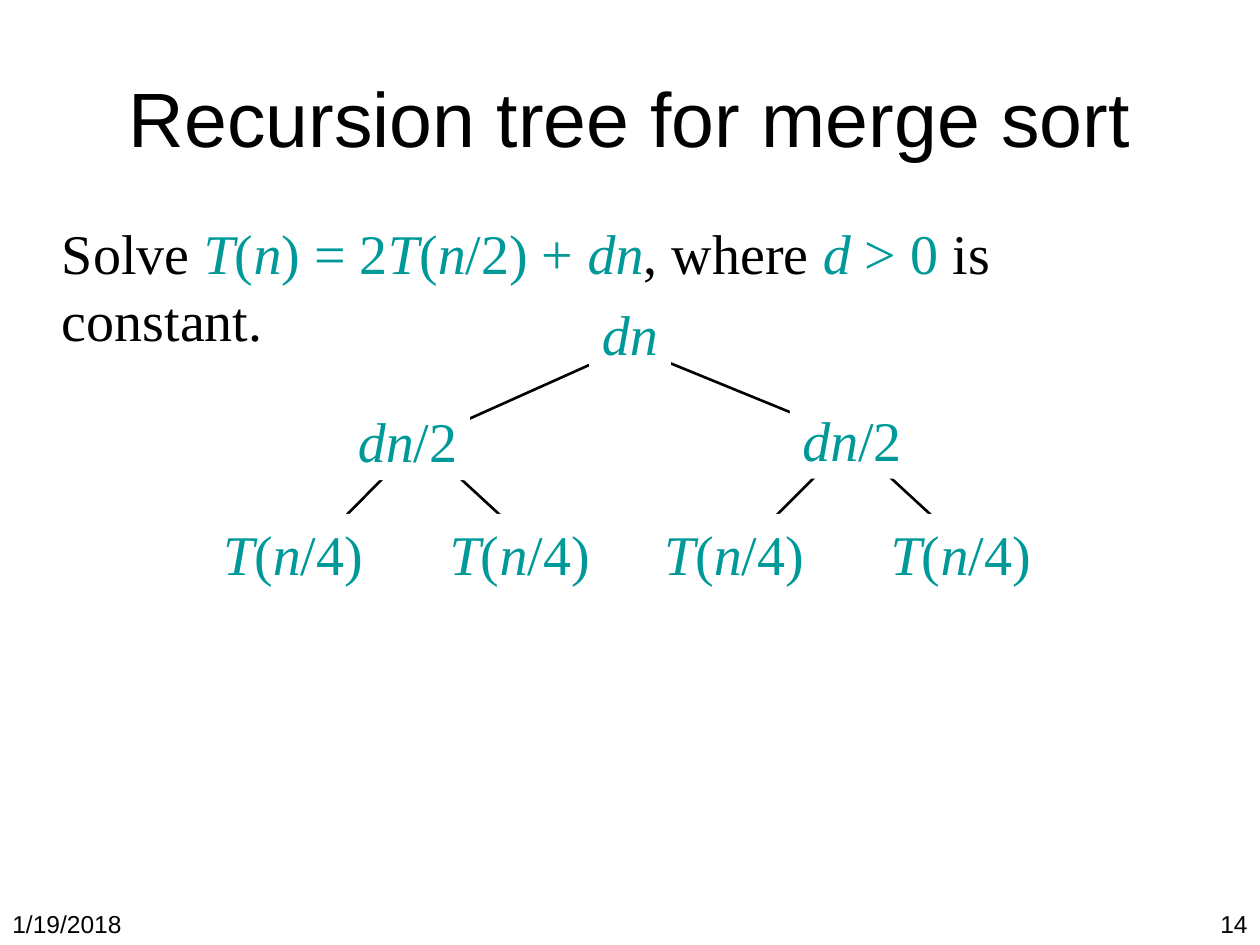
from dataclasses import dataclass

from lxml.etree import SubElement
from pptx import Presentation
from pptx.dml.color import RGBColor
from pptx.enum.shapes import MSO_CONNECTOR, MSO_SHAPE
from pptx.enum.text import MSO_ANCHOR, PP_ALIGN
from pptx.oxml.ns import qn
from pptx.util import Cm, Pt

COLORS = {"text": "000000", "math": "009999", "back": "FFFFFF"}
SANS, SERIF = "Arial", "Times New Roman"
NODE_H = 1.6


@dataclass
class Node:
    text: str
    x: float  # centre, cm
    y: float  # top, cm
    w: float


@dataclass
class Edge:
    x1: float
    y1: float
    x2: float
    y2: float


def rgb(name: str) -> RGBColor:
    return RGBColor.from_string(COLORS[name])


def add_text(p, text: str, *, font=SERIF, size=32, color="text") -> None:
    """Add runs to a paragraph; parts between asterisks are italic."""
    for i, part in enumerate(text.split("*")):
        if part:
            r = p.add_run()
            r.text = part
            r.font.name, r.font.size = font, Pt(size)
            r.font.italic = i % 2 == 1
            r.font.color.rgb = rgb(color)


def add_box(s, x: float, y: float, w: float, h: float, *, align=PP_ALIGN.LEFT, leading=None):
    """Add a text box and return its paragraph."""
    tf = s.shapes.add_textbox(Cm(x), Cm(y), Cm(w), Cm(h)).text_frame
    tf.word_wrap = True
    p = tf.paragraphs[0]
    p.alignment = align
    if leading:
        p.line_spacing = Pt(leading)
    return p


def draw_edge(s, e: Edge) -> None:
    c = s.shapes.add_connector(MSO_CONNECTOR.STRAIGHT, Cm(e.x1), Cm(e.y1), Cm(e.x2), Cm(e.y2))
    c.line.color.rgb, c.line.width = rgb("text"), Pt(1.5)
    SubElement(c._element.spPr, qn("a:effectLst"))


def draw_node(s, n: Node) -> None:
    sp = s.shapes.add_shape(MSO_SHAPE.RECTANGLE, Cm(n.x - n.w / 2), Cm(n.y), Cm(n.w), Cm(NODE_H))
    sp.shadow.inherit = False
    sp.fill.solid()
    sp.fill.fore_color.rgb = rgb("back")
    sp.line.fill.background()
    tf = sp.text_frame
    tf.word_wrap = False
    tf.vertical_anchor = MSO_ANCHOR.TOP
    p = tf.paragraphs[0]
    p.alignment, p.line_spacing = PP_ALIGN.CENTER, Pt(38.2)
    add_text(p, n.text, color="math")


def main() -> None:
    prs = Presentation()
    prs.slide_width, prs.slide_height = Cm(25.4), Cm(19.05)
    s = prs.slides.add_slide(prs.slide_layouts[5])

    # Title
    sp = s.shapes.title
    sp.left, sp.top, sp.width, sp.height = Cm(1.27), Cm(0.76), Cm(22.86), Cm(3.18)
    sp.text_frame.vertical_anchor = MSO_ANCHOR.MIDDLE
    p = sp.text_frame.paragraphs[0]
    p.alignment = PP_ALIGN.CENTER
    add_text(p, "Recursion tree for merge sort", font=SANS, size=44)

    # Date and slide number
    for text, x, align in (("1/19/2018", 0, PP_ALIGN.LEFT), ("14", 19.48, PP_ALIGN.RIGHT)):
        p = add_box(s, x, 18.21, 5.92, 0.84, align=align)
        add_text(p, text, font=SANS, size=14)

    # Recurrence
    p = add_box(s, 1, 4.29, 23, 1.6, leading=38.2)
    for text, color in (
        ("Solve ", "text"),
        ("*T*(*n*) = 2*T*(*n*/2) + *dn*", "math"),
        (", where ", "text"),
        ("*d *> 0", "math"),
        (" is constant.", "text"),
    ):
        add_text(p, text, color=color)

    # Edges, from each parent to its two children
    edges = [Edge(12.7, 6.99, x, 8.89) for x in (8.46, 17.35)]
    for parent, leaves in ((8.46, (6.15, 11)), (17.15, (14.81, 19.69))):
        edges += [Edge(parent, 8.89, x, 11.23) for x in leaves]
    for e in edges:
        draw_edge(s, e)

    # Nodes hide the ends of the edges
    nodes = [Node("*dn*", 12.7, 5.92, 1.65)]
    nodes += [Node("*T*(*n*/4)", x, 10.36, 3.33) for x in (5.91, 10.48, 14.8, 19.37)]
    nodes += [Node("*dn*/2", x, y, 2.51) for x, y in ((8.22, 8.08), (17.18, 8.05))]
    for n in nodes:
        draw_node(s, n)

    prs.save("out.pptx")


if __name__ == "__main__":
    main()
